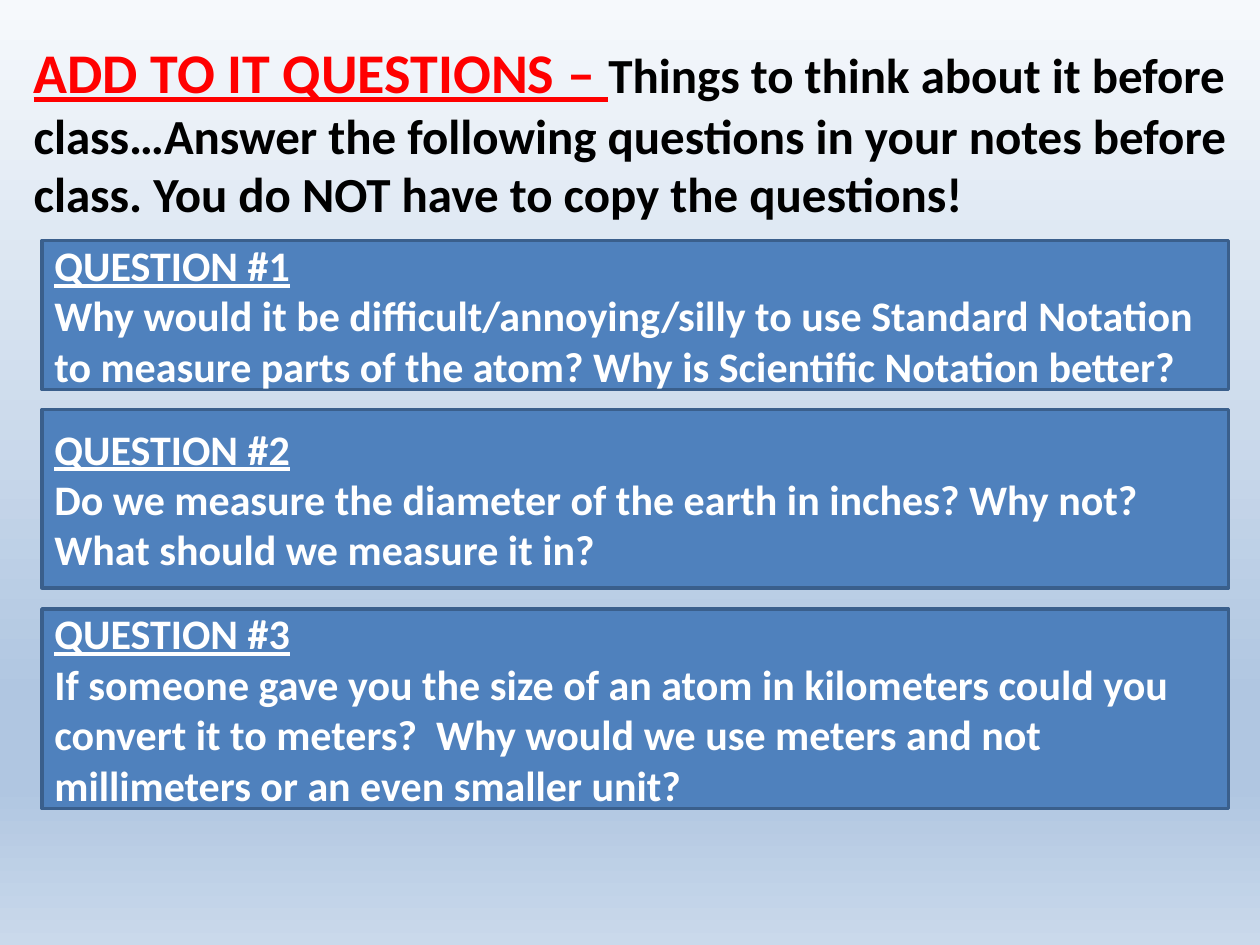
from dataclasses import dataclass

from lxml.etree import SubElement
from pptx import Presentation
from pptx.dml.color import RGBColor
from pptx.enum.shapes import MSO_SHAPE as Form
from pptx.enum.text import MSO_ANCHOR as Anchor, MSO_AUTO_SIZE as Fit, PP_ALIGN as Align
from pptx.oxml.ns import qn
from pptx.util import Pt

LEFT, WIDTH = 24, 678
STOPS = [(0, "F6F9FC"), (74, "B0C6E1"), (83, "B0C6E1"), (100, "CAD9EB")]


@dataclass
class Card:
    top: float
    height: float
    head: str
    text: str


CARDS = [
    Card(137.5, 85, "QUESTION #1",
         "Why would it be difficult/annoying/silly to use Standard Notation to measure "
         "parts of the atom? Why is Scientific Notation better?"),
    Card(234, 102, "QUESTION #2",
         "Do we measure the diameter of the earth in inches? Why not? "
         "What should we measure it in?"),
    Card(348, 114, "QUESTION #3",
         "If someone gave you the size of an atom in kilometers could you convert it to "
         "meters?  Why would we use meters and not millimeters or an even smaller unit?"),
]


def paint(target, color: str) -> None:
    target.rgb = RGBColor.from_string(color)


def add_run(para, text: str, size: float, color: str, line: bool = False) -> None:
    para.alignment = Align.LEFT
    run = para.add_run()
    run.text = text
    style = {"name": "Calibri", "size": Pt(size), "bold": True, "underline": line}
    for key, value in style.items():
        setattr(run.font, key, value)
    paint(run.font.color, color)


def set_back(slide) -> None:
    fill = slide.background.fill
    fill.gradient()
    fill.gradient_angle = 270  # counter-clockwise, so top to bottom
    stops = slide.background._cSld.find(".//" + qn("a:gsLst"))
    for old in list(stops):
        stops.remove(old)
    for spot, color in STOPS:
        stop = SubElement(stops, qn("a:gs"), pos=str(spot * 1000))
        SubElement(stop, qn("a:srgbClr"), val=color)


def set_title(title) -> None:
    place = {"left": 12, "top": 18, "width": 708, "height": 135}
    for key, value in place.items():
        setattr(title, key, Pt(value))
    frame = title.text_frame
    format = {"word_wrap": True, "auto_size": Fit.NONE, "vertical_anchor": Anchor.TOP}
    for key, value in format.items():
        setattr(frame, key, value)
    para = frame.paragraphs[0]
    add_run(para, "ADD TO IT QUESTIONS – ", 32, "FF0000", True)
    add_run(para, "Things to think about it before class…Answer the following questions "
            "in your notes before class. You do NOT have to copy the questions!",
            28, "000000")


def add_card(slide, card: Card) -> None:
    box = slide.shapes.add_shape(
        Form.RECTANGLE, Pt(LEFT), Pt(card.top), Pt(WIDTH), Pt(card.height))
    box.shadow.inherit = False
    box.fill.solid()
    paint(box.fill.fore_color, "4F81BD")
    paint(box.line.color, "3A5F8C")
    box.line.width = Pt(2)
    frame = box.text_frame
    frame.word_wrap = True
    frame.vertical_anchor = Anchor.MIDDLE
    add_run(frame.paragraphs[0], card.head, 24, "FFFFFF", True)
    add_run(frame.add_paragraph(), card.text, 24, "FFFFFF")


def main() -> None:
    deck = Presentation()
    deck.slide_width, deck.slide_height = Pt(720), Pt(540)
    slide = deck.slides.add_slide(deck.slide_layouts[5])  # title only
    set_back(slide)
    # Heading
    set_title(slide.shapes.title)
    # Question boxes
    for card in CARDS:
        add_card(slide, card)
    deck.save("out.pptx")


if __name__ == "__main__":
    main()
